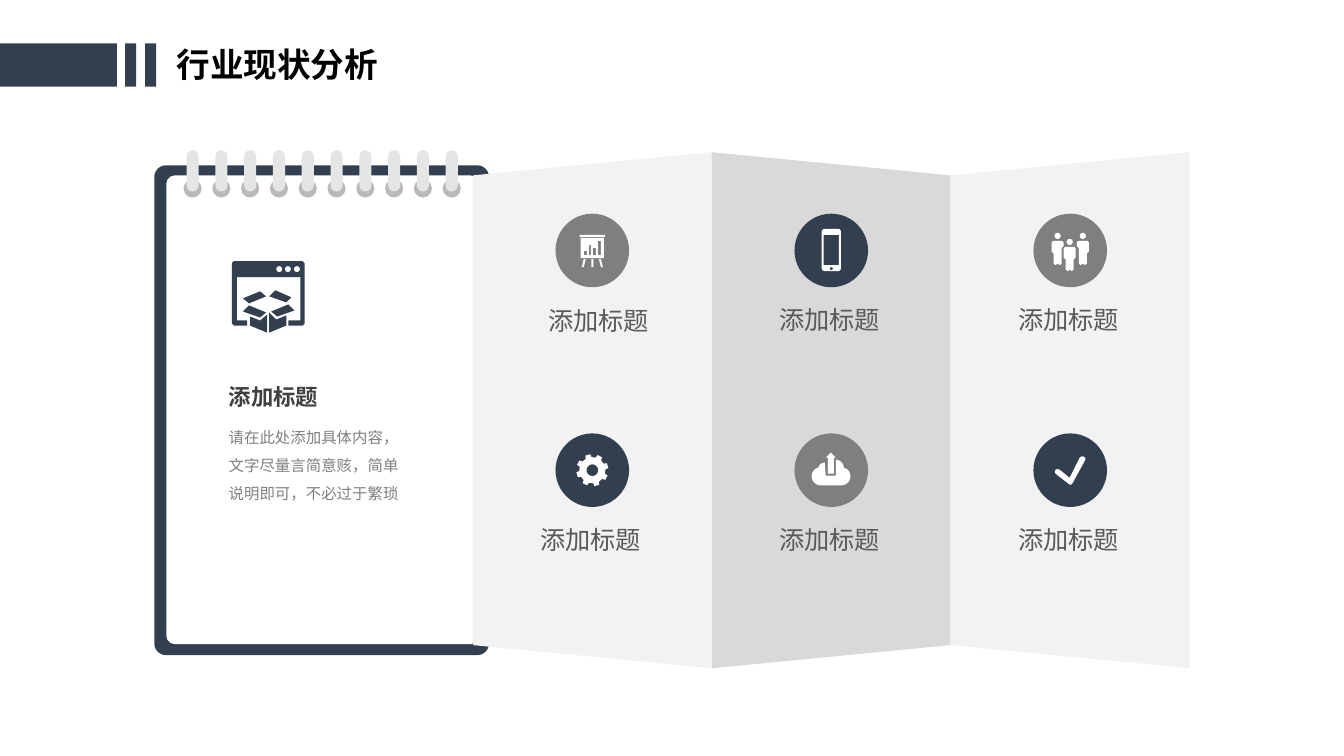
import math
import pptx
import pptx.dml.color
import pptx.enum.shapes
import pptx.enum.text
import pptx.util
from lxml import etree

Inches = pptx.util.Inches
MSO = pptx.enum.shapes.MSO_SHAPE
TEXT = pptx.enum.text

# Content
TITLE = "行业现状分析"
NOTE_HEADING = "添加标题"
NOTE_BODY = "请在此处添加具体内容，文字尽量言简意赅，简单说明即可，不必过于繁琐"
# column, row, icon, disc colour, label, label offset from its grid place
TOPICS = [
    (0, 0, "board", "gray", "添加标题", (0.08, 0.01)),
    (0, 1, "gear", "navy", "添加标题", (0, 0)),
    (1, 0, "phone", "navy", "添加标题", (0, 0)),
    (2, 1, "check", "navy", "添加标题", (0, 0)),
    (2, 0, "people", "gray", "添加标题", (0, 0)),
    (1, 1, "cloud", "gray", "添加标题", (0, 0)),
]

THEME = {
    "navy": "323F4F", "gray": "7F7F7F", "white": "FFFFFF", "ring": "E5E5E5",
    "hole": "B9B9B9", "panel_light": "F2F2F2", "panel_dark": "D9D9D9",
    "east_asian": "Noto Sans CJK SC",
    "title": {"size": 24, "name": "Arial", "color": "000000", "bold": True},
    "heading": {"size": 16, "name": "Noto Sans CJK SC", "color": "404040", "bold": True},
    "body": {"size": 11, "name": "Noto Sans CJK SC", "color": "808080", "bold": False},
    "label": {"size": 18, "name": "Noto Sans CJK SC", "color": "595959", "bold": False},
}


# Outlines, in hundredths of an inch
def arc(cx, cy, r, start, end, steps=10):
    angles = [math.radians(start + (end - start) * i / steps) for i in range(steps + 1)]
    return [(cx + r * math.cos(a), cy + r * math.sin(a)) for a in angles]


def circle(cx, cy, r):
    return arc(cx, cy, r, 0, 345, 23)


def rect(x, y, w, h):
    return [(x, y), (x + w, y), (x + w, y + h), (x, y + h)]


def rounded(x, y, w, h, r):
    corners = [(x + r, y + r), (x + w - r, y + r), (x + w - r, y + h - r), (x + r, y + h - r)]
    return [p for i, (cx, cy) in enumerate(corners)
            for p in arc(cx, cy, r, 180 + 90 * i, 270 + 90 * i, 5)]


def person(cx, top, left_arm=10.5, right_arm=10.5):
    body = [(-6, 1.5), (-4.5, 0), (4.5, 0), (6, 1.5), (6, right_arm), (4, right_arm + 2),
            (4, 22.5), (2, 24), (0, 22.5), (-2, 24), (-4, 22.5), (-4, left_arm + 2), (-6, left_arm)]
    return [circle(cx, top - 5, 3), [(cx + x, top + y) for x, y in body]]


def gear(teeth, root, tip):
    outline = []
    for tooth in range(teeth):
        middle = 360 * tooth / teeth - 16.7
        for turn, r in ((-13, root), (-9, tip), (9, tip), (13, root)):
            outline += arc(0, 0, r, middle + turn, middle + turn, 1)[:1]
    return [outline, circle(0, 0, 5.8)]


ICONS = {
    "board": [rect(-12.5, -15.5, 25, 2), rect(-11.5, -12.5, 23, 20),
              rect(5.5, -9.5, 3, 14), rect(-3.5, -5.5, 2, 10),
              rect(0.5, -2.5, 3, 7), rect(-8.5, 0.5, 3, 4),
              [(-8.5, 8.5), (-10.5, 16.5), (-8.5, 16.5), (-6.5, 8.5)],
              rect(-1, 8.5, 2, 8),
              [(6.5, 8.5), (8.5, 16.5), (10.5, 16.5), (8.5, 8.5)]],
    "gear": gear(8, 13, 16),
    "phone": [rounded(-9.5, -21.5, 19, 42, 3), rect(-7.5, -15.5, 15, 30), circle(0, 18, 1.5)],
    "check": [[(-1.5, 13.5), (-14.5, 3.5), (-15.2, 1.5), (-14.5, -0.5), (-12.8, -1.2),
               (-10.5, -0.5), (-0.5, 7.5), (9.5, -12.5), (11.2, -13.8), (13.5, -13.5),
               (15.2, -11.8), (14.5, -9.5), (2.5, 12.5), (0.5, 14.5)]],
    "people": (person(-12.5, -9.5, right_arm=5) + person(12.5, -9.5, left_arm=5)
               + person(-0.5, -3.5)),
    "cloud": [[(-0.5, -17.5), (-5.5, -12.5), (-3.5, -12.5), (-3.5, 3.5),
               (2.5, 3.5), (2.5, -12.5), (4.5, -12.5)],
              [(4.5, 5.5), (-5.5, 5.5)] + arc(-6.5, -1, 6.5, 270, 190)
              + arc(-10.5, 6, 9, 250, 90) + arc(10, 6, 9, 90, -60) + arc(4, -2, 8.5, 0, -87)],
}
WINDOW = [[(2, 0), (70, 0), (72, 2), (72, 62), (70, 64), (56, 64), (56, 59), (68, 59),
           (68, 16), (5, 16), (5, 59), (15, 59), (15, 64), (2, 64), (0, 62), (0, 2)],
          circle(47, 8, 3), circle(55.5, 8, 3), circle(64.5, 8, 3)]
BOX_SIDES = [
    [(34, 35), (28, 30), (11, 37), (17, 42)],
    [(59, 36), (43, 29), (37, 35), (54, 41)],
    [(37, 51), (37, 71), (54, 64), (54, 54), (44, 58)],
    [(39, 50), (45, 55), (62, 49), (56, 43)],
    [(18, 55), (18, 64), (35, 71), (35, 53), (28, 59)],
    [(34, 51), (17, 44), (11, 50), (28, 56)],
]

deck = pptx.Presentation()
deck.slide_width, deck.slide_height = Inches(13.33), Inches(7.5)
slide = deck.slides.add_slide(deck.slide_layouts[5])


def paint(shape, color):
    shape.shadow.inherit = False
    shape.fill.solid()
    shape.fill.fore_color.rgb = pptx.dml.color.RGBColor.from_string(THEME[color])
    shape.line.fill.background()


def add_preset(kind, x, y, w, h, color, corner=None):
    shape = slide.shapes.add_shape(kind, *map(Inches, (x, y, w, h)))
    if corner is not None:
        shape.adjustments[0] = corner
    paint(shape, color)


def add_outline(contours, x, y, color):
    placed = [[(Inches(x + px / 100), Inches(y + py / 100)) for px, py in contour]
              for contour in contours]
    builder = slide.shapes.build_freeform(*placed[0][0])
    for i, contour in enumerate(placed):
        if i:
            builder.move_to(*contour[0])
        builder.add_line_segments(contour[1:], close=True)
    paint(builder.convert_to_shape(), color)


def write(holder, text, style, line_spacing=None):
    frame = holder.text_frame
    frame_format = {"word_wrap": True, "auto_size": TEXT.MSO_AUTO_SIZE.NONE,
                    "vertical_anchor": TEXT.MSO_ANCHOR.TOP}
    for name, value in frame_format.items():
        setattr(frame, name, value)
    paragraph = frame.paragraphs[0]
    paragraph.alignment = TEXT.PP_ALIGN.LEFT
    paragraph.line_spacing = line_spacing
    run = paragraph.add_run()
    run.text = text
    look = THEME[style]
    font_format = {"size": pptx.util.Pt(look["size"]), "name": look["name"], "bold": look["bold"]}
    for name, value in font_format.items():
        setattr(run.font, name, value)
    run.font.color.rgb = pptx.dml.color.RGBColor.from_string(look["color"])
    latin = run.font._element.find(pptx.oxml.ns.qn("a:latin"))
    east_asian = etree.Element(pptx.oxml.ns.qn("a:ea"), typeface=THEME["east_asian"])
    latin.addnext(east_asian)


def add_text(x, y, w, h, text, style, line_spacing=None):
    write(slide.shapes.add_textbox(*map(Inches, (x, y, w, h))), text, style, line_spacing)


# Title and its bars
heading = slide.shapes.title
title_place = {"left": 1.65, "top": 0.39, "width": 3.52, "height": 0.5}
for side, length in title_place.items():
    setattr(heading, side, Inches(length))
write(heading, TITLE, "title")
for x, w in ((0, 1.16), (1.24, 0.11), (1.44, 0.11)):
    add_preset(MSO.RECTANGLE, x, 0.43, w, 0.43, "navy")

# Notebook with ten rings
add_preset(MSO.ROUNDED_RECTANGLE, 1.53, 1.64, 3.32, 4.86, "navy", 0.035)
add_preset(MSO.ROUNDED_RECTANGLE, 1.65, 1.74, 3.1, 4.65, "white", 0.027)
RING_PITCH = 2.57 / 9
for ring in range(10):
    x = 1.82 + ring * RING_PITCH
    add_preset(MSO.OVAL, x, 1.78, 0.18, 0.18, "hole")
    add_preset(MSO.ROUNDED_RECTANGLE, x + 0.03, 1.49, 0.12, 0.41, "ring", 0.5)

# Folded panels: each edge alternates between low and high
PANEL_LEFT, PANEL_WIDTH = 4.69, 2.37
for fold, color in enumerate(("panel_light", "panel_dark", "panel_light")):
    near, far = (23, 0) if fold % 2 == 0 else (0, 23)
    width = PANEL_WIDTH * 100
    add_outline([[(0, near), (width, far), (width, 512 - far), (0, 512 - near)]],
                PANEL_LEFT + fold * PANEL_WIDTH, 1.51, color)

# Topics
DISC, ROW_PITCH = 0.73, 2.18
for column, row, icon, color, label, (dx, dy) in TOPICS:
    x, y = 5.51 + column * PANEL_WIDTH, 2.12 + row * ROW_PITCH
    add_preset(MSO.OVAL, x, y, DISC, DISC, color)
    add_outline(ICONS[icon], x + DISC / 2, y + DISC / 2, "white")
    add_text(x - 0.25 + dx, y + 0.85 + dy, 1.65, 0.5, label, "label")

# Notebook page
for contours in [WINDOW] + [[side] for side in BOX_SIDES]:
    add_outline(contours, 2.3, 2.59, "navy")
add_text(2.17, 3.75, 1.19, 0.37, NOTE_HEADING, "heading")
add_text(2.17, 4.1, 1.94, 0.91, NOTE_BODY, "body", pptx.util.Pt(20))

deck.save("out.pptx")
